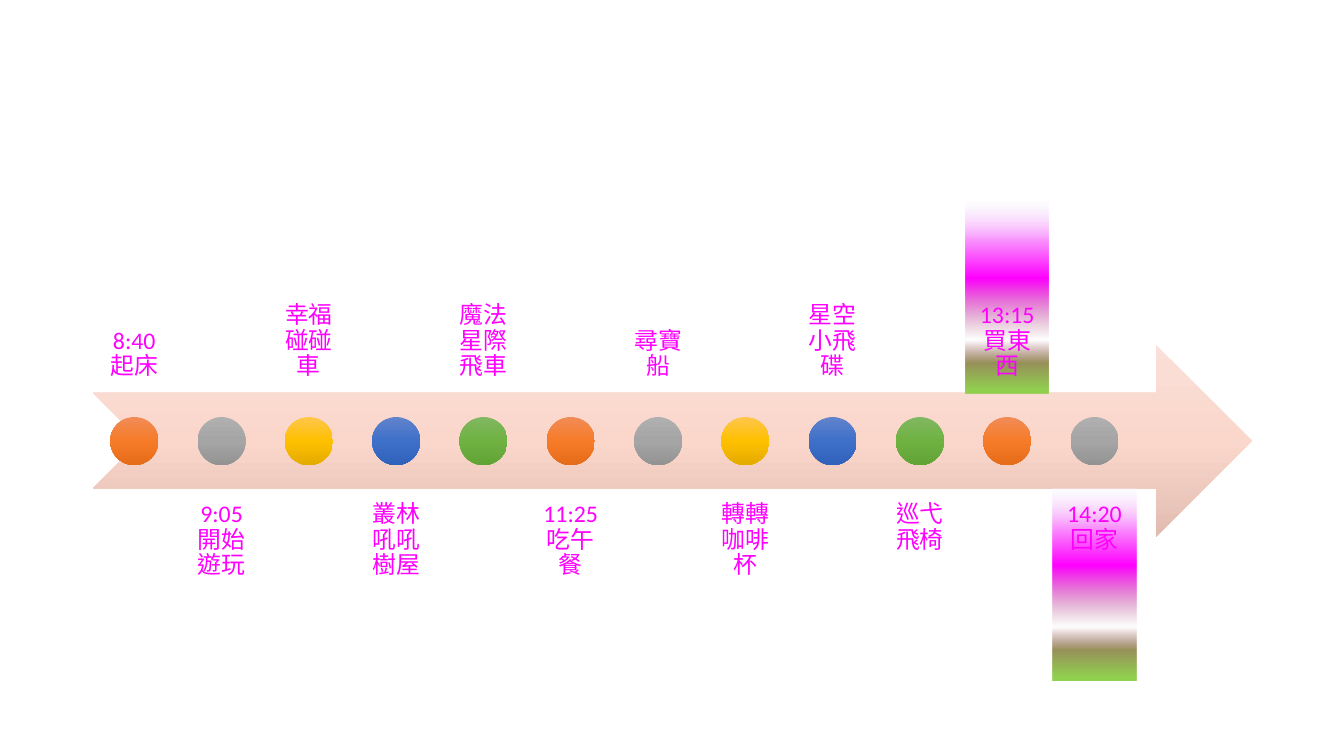
from dataclasses import dataclass

from lxml.etree import SubElement
from pptx import Presentation
from pptx.dml.color import RGBColor
from pptx.enum.lang import MSO_LANGUAGE_ID
from pptx.enum.shapes import MSO_SHAPE
from pptx.enum.text import MSO_ANCHOR, PP_ALIGN
from pptx.oxml.ns import qn
from pptx.shapes.autoshape import Shape
from pptx.slide import Slide
from pptx.util import Cm, Pt


@dataclass(frozen=True)
class Stop:
    position: int
    color: str
    opacity: int = 100


@dataclass(frozen=True)
class Event:
    label: str
    highlighted: bool = False


def even_stops(top: str, middle: str, bottom: str) -> list[Stop]:
    return [Stop(0, top), Stop(50, middle), Stop(100, bottom)]


LEFT, STEP = 2.34, 2.2
LABEL_WIDTH, LABEL_HEIGHT = 2.09, 4.83
ABOVE_TOP, BELOW_TOP = 5.08, 12.32
ARROW_TOP, ARROW_WIDTH = 8.69, 29.21
DOT_TOP, DOT_SIZE = 10.51, 1.21
INSET = 0.33

ARROW_STOPS = even_stops("FAE0D8", "FAD6CB", "E2BCB1")
DOT_STOPS = [
    even_stops("F18C57", "F67B28", "E56C19"),
    even_stops("AFAFAF", "A5A5A5", "939393"),
    even_stops("FFC64B", "FFC000", "E3AB00"),
    even_stops("6183CB", "3E70CA", "3062BB"),
    even_stops("81B861", "6FB242", "62A336"),
]
HIGHLIGHT_STOPS = [
    Stop(0, "F7FAFD", 25), Stop(21, "FA8EFE"), Stop(40, "FF00FF"),
    Stop(72, "9C5662", 0), Stop(84, "979159"), Stop(98, "92D050"),
]
EVENTS = [
    Event("8:40起床"),
    Event("9:05開始遊玩"),
    Event("幸福碰碰車"),
    Event("叢林吼吼樹屋"),
    Event("魔法星際飛車"),
    Event("11:25吃午餐"),
    Event("尋寶船"),
    Event("轉轉咖啡杯"),
    Event("星空小飛碟"),
    Event("巡弋飛椅"),
    Event("13:15買東西", highlighted=True),
    Event("14:20回家", highlighted=True),
]


def rgb(color: str) -> RGBColor:
    return RGBColor.from_string(color)


def fill_gradient(sp: Shape, stops: list[Stop]) -> None:
    sp.fill.gradient()
    sp.fill.gradient_angle = 270
    stop_list = next(sp.element.iter(qn("a:gsLst")))
    stop_list.clear()
    for stop in stops:
        gs = SubElement(stop_list, qn("a:gs"), pos=str(stop.position * 1000))
        color = SubElement(gs, qn("a:srgbClr"), val=stop.color)
        if stop.opacity < 100:
            SubElement(color, qn("a:alpha"), val=str(stop.opacity * 1000))


def add_gradient_shape(s: Slide, kind: MSO_SHAPE, left: float, top: float,
                       width: float, height: float, stops: list[Stop]) -> None:
    sp = s.shapes.add_shape(kind, Cm(left), Cm(top), Cm(width), Cm(height))
    sp.shadow.inherit = False
    sp.line.fill.background()
    fill_gradient(sp, stops)


def add_label(s: Slide, text: str, left: float, top: float, anchor: MSO_ANCHOR) -> None:
    sp = s.shapes.add_textbox(Cm(left), Cm(top), Cm(LABEL_WIDTH), Cm(LABEL_HEIGHT))
    tf = sp.text_frame
    tf.word_wrap = True
    tf.vertical_anchor = anchor
    tf.margin_left = tf.margin_right = tf.margin_top = tf.margin_bottom = Cm(INSET)
    p = tf.paragraphs[0]
    p.alignment = PP_ALIGN.CENTER
    p.line_spacing = 0.9
    r = p.add_run()
    r.text = text
    r.font.name = "Calibri"
    r.font.size = Pt(17)
    r.font.color.rgb = rgb("FF00FF")
    r.font.language_id = MSO_LANGUAGE_ID.TRADITIONAL_CHINESE


def add_event(s: Slide, index: int, event: Event) -> None:
    left = LEFT + index * STEP
    above = index % 2 == 0
    top = ABOVE_TOP if above else BELOW_TOP
    anchor = MSO_ANCHOR.BOTTOM if above else MSO_ANCHOR.TOP
    if event.highlighted:
        add_gradient_shape(s, MSO_SHAPE.RECTANGLE, left, top,
                           LABEL_WIDTH, LABEL_HEIGHT, HIGHLIGHT_STOPS)
    add_label(s, event.label, left, top, anchor)
    add_gradient_shape(s, MSO_SHAPE.OVAL, left + (LABEL_WIDTH - DOT_SIZE) / 2, DOT_TOP,
                       DOT_SIZE, DOT_SIZE, DOT_STOPS[index % len(DOT_STOPS)])


def main() -> None:
    prs = Presentation()
    prs.slide_width, prs.slide_height = Cm(33.87), Cm(19.05)
    s = prs.slides.add_slide(prs.slide_layouts[6])
    add_gradient_shape(s, MSO_SHAPE.NOTCHED_RIGHT_ARROW, LEFT, ARROW_TOP,
                       ARROW_WIDTH, LABEL_HEIGHT, ARROW_STOPS)
    for index, event in enumerate(EVENTS):
        add_event(s, index, event)
    prs.save("out.pptx")


if __name__ == "__main__":
    main()
